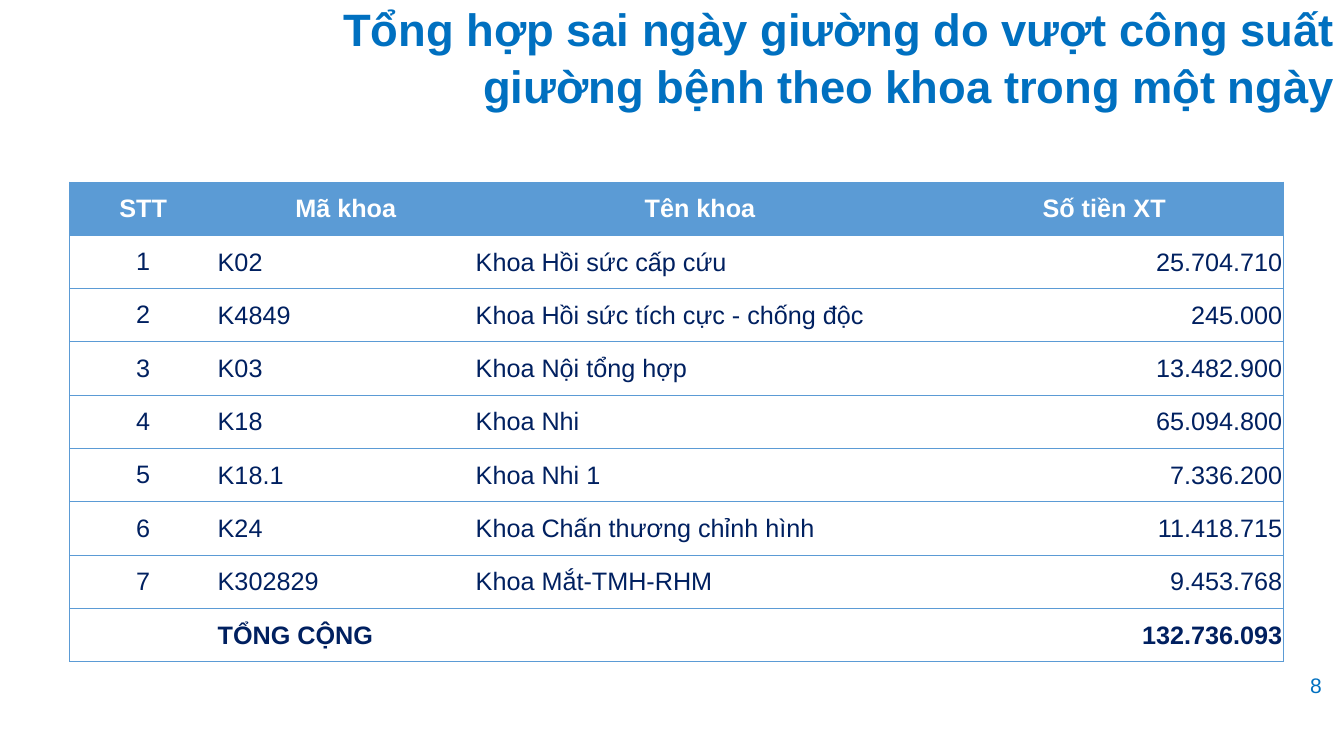
from dataclasses import dataclass

from lxml import etree
from pptx import Presentation
from pptx.dml.color import RGBColor
from pptx.enum.text import MSO_ANCHOR, MSO_AUTO_SIZE, PP_ALIGN
from pptx.oxml.ns import qn
from pptx.util import Pt

LEFT, MID, RIGHT = PP_ALIGN.LEFT, PP_ALIGN.CENTER, PP_ALIGN.RIGHT
TOP, CENTER = MSO_ANCHOR.TOP, MSO_ANCHOR.MIDDLE
FIXED = MSO_AUTO_SIZE.NONE

TITLE = "Tổng hợp sai ngày giường do vượt công suất giường bệnh theo khoa trong một ngày"
PAGE = "8"
HEAD = ["STT", "Mã khoa", "Tên khoa", "Số tiền XT"]
WARDS = [
    ("K02", "Khoa Hồi sức cấp cứu", "25.704.710"),
    ("K4849", "Khoa Hồi sức tích cực - chống độc", "245.000"),
    ("K03", "Khoa Nội tổng hợp", "13.482.900"),
    ("K18", "Khoa Nhi", "65.094.800"),
    ("K18.1", "Khoa Nhi 1", "7.336.200"),
    ("K24", "Khoa Chấn thương chỉnh hình", "11.418.715"),
    ("K302829", "Khoa Mắt-TMH-RHM", "9.453.768"),
]
TOTAL = ["", "TỔNG CỘNG", "", "132.736.093"]
ALIGNS = [MID, LEFT, LEFT, RIGHT]
WIDTHS = [105.12, 184.32, 321.84, 255.6]
ROW = 38.08


@dataclass(frozen=True)
class Theme:
    font: str = "Arial"
    blue: str = "0070C0"
    navy: str = "002060"
    band: str = "5B9BD5"
    white: str = "FFFFFF"
    title: float = 32.4
    cell: float = 18
    page: float = 15
    rule: float = 0.5


THEME = Theme()


def write(frame, text, size=THEME.cell, color=THEME.navy, bold=False, align=LEFT, lead=1.0):
    par = frame.paragraphs[0]
    par.alignment = align
    par.line_spacing = lead
    par.space_before = Pt(0)
    font = par.font
    if text:
        run = par.add_run()
        run.text = text
        font = run.font
    font.name = THEME.font
    font.size = Pt(size)
    font.bold = bold
    font.color.rgb = RGBColor.from_string(color)


def inset(part, left, top, right, base):
    part.margin_left, part.margin_top = Pt(left), Pt(top)
    part.margin_right, part.margin_bottom = Pt(right), Pt(base)


def edge(cell, shown):
    props = cell._tc.get_or_add_tcPr()
    for spot, side in enumerate("LRTB"):
        line = etree.Element(qn("a:ln" + side), w=str(Pt(THEME.rule)))
        if side in shown:
            fill = etree.SubElement(line, qn("a:solidFill"))
            etree.SubElement(fill, qn("a:srgbClr"), val=THEME.band)
        else:
            etree.SubElement(line, qn("a:noFill"))
        props.insert(spot, line)


def add_title(slide):
    title = slide.shapes.title
    title.left, title.top = Pt(195.84), Pt(-7.2)
    title.width, title.height = Pt(764.64), Pt(83.52)
    frame = title.text_frame
    frame.word_wrap = True
    frame.auto_size = FIXED
    frame.vertical_anchor = TOP
    inset(frame, 7.2, 6, 7.2, 0)
    write(frame, TITLE, size=THEME.title, color=THEME.blue, bold=True, align=RIGHT, lead=1.05)


def add_page(slide):
    box = slide.shapes.add_textbox(Pt(920.16), Pt(475.2), Pt(39.6), Pt(28.08))
    frame = box.text_frame
    frame.word_wrap = True
    frame.vertical_anchor = CENTER
    write(frame, PAGE, size=THEME.page, color=THEME.blue, align=MID)


def add_grid(slide):
    body = [(str(num), *ward) for num, ward in enumerate(WARDS, 1)]
    rows = [HEAD, *body, TOTAL]
    last = len(HEAD) - 1
    shape = slide.shapes.add_table(
        len(rows), len(HEAD), Pt(49.68), Pt(129.9), Pt(sum(WIDTHS)), Pt(ROW * len(rows)))
    table = shape.table
    table.horz_banding = False
    for col, width in zip(table.columns, WIDTHS):
        col.width = Pt(width)
    for y, row in enumerate(rows):
        table.rows[y].height = Pt(ROW)
        head = row is HEAD
        for x, text in enumerate(row):
            cell = table.cell(y, x)
            cell.vertical_anchor = CENTER
            if not head and x:
                inset(cell, 0.72, 0.72, 0.72, 0)
            cell.fill.solid()
            cell.fill.fore_color.rgb = RGBColor.from_string(THEME.band if head else THEME.white)
            edge(cell, "TB" + "L" * (x == 0) + "R" * (x == last))
            write(cell.text_frame, text,
                  color=THEME.white if head else THEME.navy,
                  bold=head or row is TOTAL,
                  align=MID if head else ALIGNS[x])


def main():
    deck = Presentation()
    deck.slide_width, deck.slide_height = Pt(960), Pt(540)
    slide = deck.slides.add_slide(deck.slide_layouts[5])
    add_page(slide)
    add_title(slide)
    add_grid(slide)
    deck.save("out.pptx")


if __name__ == "__main__":
    main()
